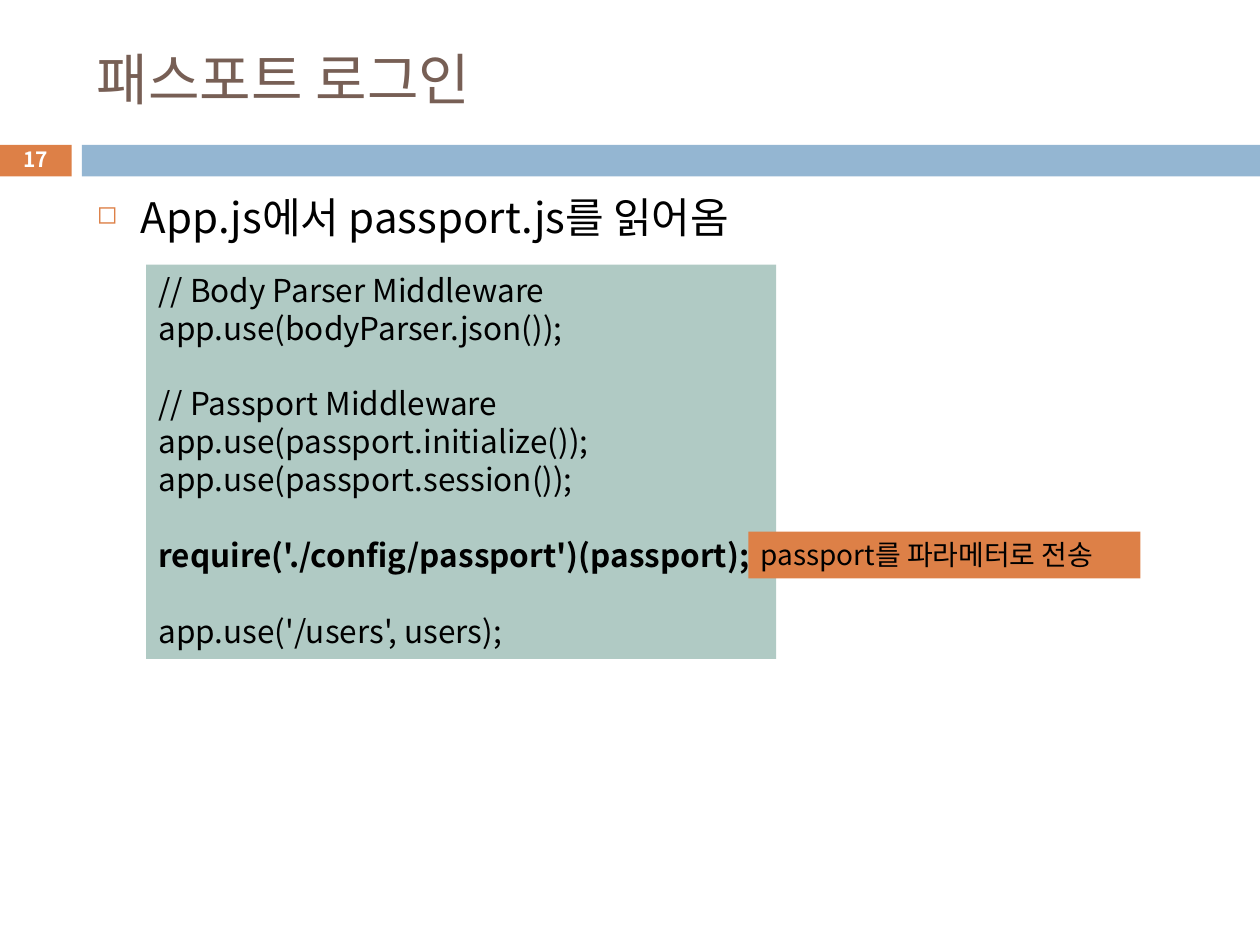
from lxml import etree
from pptx import Presentation
from pptx.dml.color import RGBColor
from pptx.enum.shapes import MSO_SHAPE
from pptx.enum.text import MSO_ANCHOR, PP_ALIGN
from pptx.oxml.ns import qn
from pptx.util import Inches, Pt

RECT = MSO_SHAPE.RECTANGLE
TOP, MIDDLE = MSO_ANCHOR.TOP, MSO_ANCHOR.MIDDLE
LEFT, CENTER = PP_ALIGN.LEFT, PP_ALIGN.CENTER
FONT = "Noto Sans CJK KR"
COLORS = {"orange": "DD8047", "blue": "94B6D2", "green": "B0CAC4",
          "brown": "775F55", "black": "000000", "white": "FFFFFF"}


class Deck:
    def __init__(self):
        self.prs = Presentation()
        self.prs.slide_width, self.prs.slide_height = Inches(10), Inches(7.5)
        self.slide = self.prs.slides.add_slide(self.prs.slide_layouts[6])

    def color(self, name):
        return RGBColor.from_string(COLORS[name])

    def bar(self, x, y, w, h, fill):
        bar = self.slide.shapes.add_shape(
            RECT, Inches(x), Inches(y), Inches(w), Inches(h))
        bar.shadow.inherit = False
        bar.fill.solid()
        bar.fill.fore_color.rgb = self.color(fill)
        bar.line.fill.background()
        return bar

    def text(self, x, y, w, h, text, size, **style):
        box = self.slide.shapes.add_textbox(
            Inches(x), Inches(y), Inches(w), Inches(h))
        return self.label(box, text, size, **style)

    def label(self, shape, text, size, color="black", bold=False,
              align=LEFT, anchor=TOP, wrap=True):
        frame = shape.text_frame
        frame.word_wrap, frame.vertical_anchor = wrap, anchor
        frame.text = text
        for paragraph in frame.paragraphs:
            paragraph.alignment = align
            font = paragraph.font
            font.name, font.size, font.bold = FONT, Pt(size), bold
            font.color.rgb = self.color(color)
            # Korean glyphs take the East Asian typeface
            props = paragraph._p.pPr.find(qn("a:defRPr"))
            etree.SubElement(props, qn("a:ea"), typeface=FONT)
        return frame.paragraphs

    def bullet(self, paragraph, char, color, percent, indent):
        props = paragraph._p.get_or_add_pPr()
        props.set("marL", str(Inches(indent)))
        props.set("indent", str(-Inches(indent)))
        tint = etree.Element(qn("a:buClr"))
        etree.SubElement(tint, qn("a:srgbClr"), val=COLORS[color])
        size = etree.Element(qn("a:buSzPct"), val=str(percent * 1000))
        mark = etree.Element(qn("a:buChar"), char=char)
        for part in (tint, size, mark):
            props.find(qn("a:defRPr")).addprevious(part)


def main():
    deck = Deck()

    # Header band with page number
    deck.bar(0, 1.15, 0.57, 0.25, "orange")
    deck.bar(0.65, 1.15, 9.35, 0.25, "blue")
    deck.text(0, 1.13, 0.57, 0.27, "17", 12, color="white", bold=True,
              align=CENTER, anchor=MIDDLE)

    # Title and main point
    deck.text(0.67, 0.25, 8.92, 0.74, "패스포트 로그인", 32,
              color="brown", anchor=MIDDLE)
    point = deck.text(0.67, 1.47, 8.92, 0.6,
                      "App.js에서 passport.js를 읽어옴", 24)[0]
    point.space_before = Pt(7)
    deck.bullet(point, "◻", "orange", 60, 0.35)

    # Code listing: groups of lines set one line apart
    code_groups = [
        ["// Body Parser Middleware", "app.use(bodyParser.json());"],
        ["// Passport Middleware", "app.use(passport.initialize());",
         "app.use(passport.session());"],
        ["require('./config/passport')(passport);"],
        ["app.use('/users', users);"],
    ]
    listing = deck.bar(1.16, 2.1, 5, 3.13, "green")
    code = "\n".join(line for group in code_groups for line in group)
    lines = deck.label(listing, code, 18)
    group_starts = [group[0] for group in code_groups[1:]]
    for line in lines:
        if line.text in group_starts:
            line.space_before = Pt(21.7)
        line.font.bold = line.text.startswith("require")

    # Note on the highlighted line
    note = deck.bar(5.94, 4.22, 3.11, 0.37, "orange")
    deck.label(note, "passport를 파라메터로 전송", 16, wrap=False)

    deck.prs.save("out.pptx")


if __name__ == "__main__":
    main()
